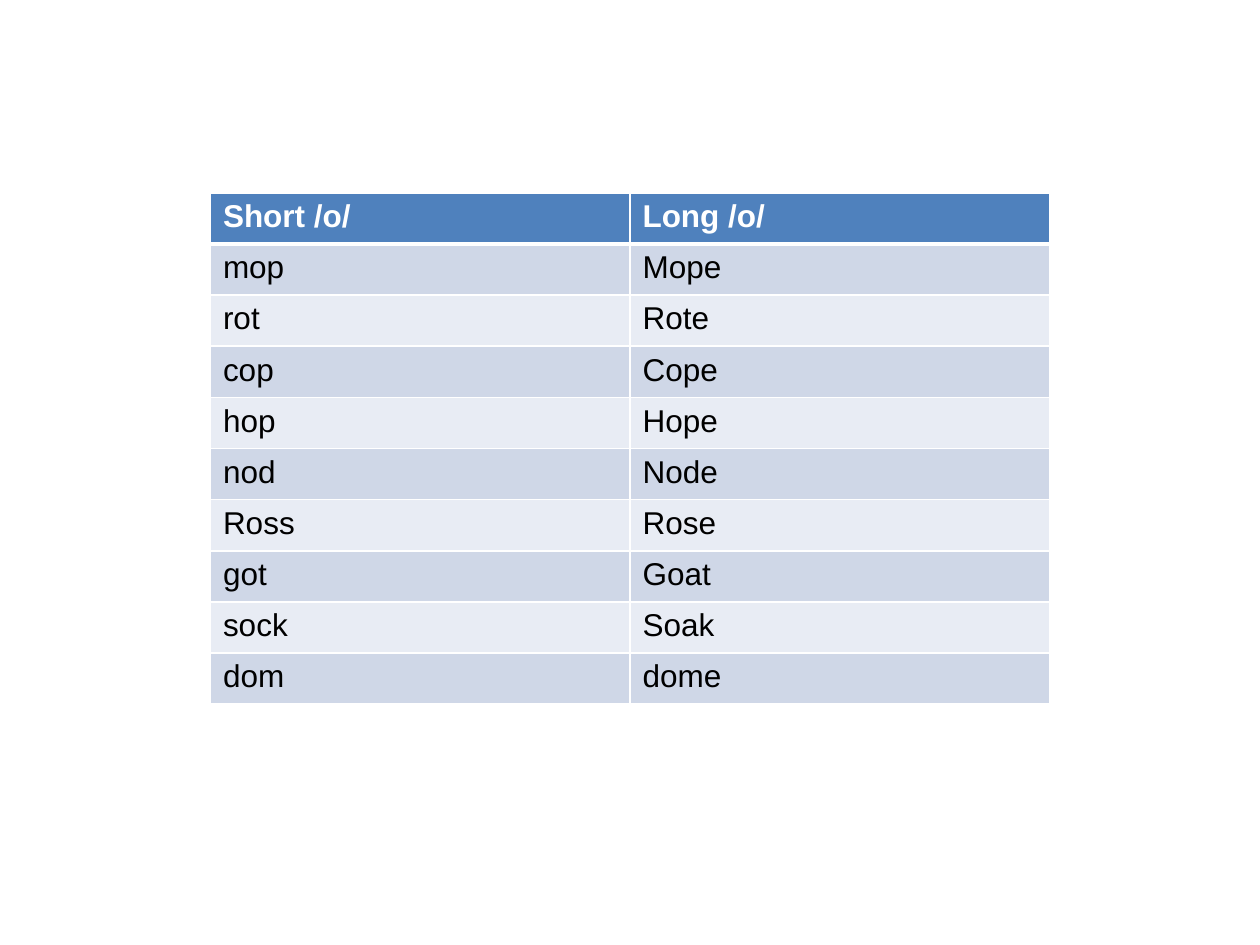
from typing import NamedTuple

from lxml.etree import SubElement
from pptx import Presentation
from pptx.dml.color import RGBColor
from pptx.oxml.ns import qn
from pptx.table import _Cell
from pptx.util import Inches, Pt


class WordPair(NamedTuple):
    short: str
    long: str


class RowStyle(NamedTuple):
    fill: str
    text: str
    bold: bool
    top: float
    bottom: float


HEADINGS = WordPair("Short /o/", "Long /o/")
WORD_PAIRS = [
    WordPair("mop", "Mope"),
    WordPair("rot", "Rote"),
    WordPair("cop", "Cope"),
    WordPair("hop", "Hope"),
    WordPair("nod", "Node"),
    WordPair("Ross", "Rose"),
    WordPair("got", "Goat"),
    WordPair("sock", "Soak"),
    WordPair("dom", "dome"),
]
THIN, THICK = 1, 3
BORDER = "FFFFFF"


def color(hex_code: str) -> RGBColor:
    return RGBColor.from_string(hex_code)


def row_style(row: int) -> RowStyle:
    if row == 0:
        return RowStyle("4F81BD", "FFFFFF", True, THIN, THICK)
    band = "CFD7E7" if row % 2 else "E8ECF4"
    return RowStyle(band, "000000", False, THICK if row == 1 else THIN, THIN)


def add_borders(cell: _Cell, top: float, bottom: float) -> None:
    properties = cell._tc.get_or_add_tcPr()
    widths = {"a:lnL": THIN, "a:lnR": THIN, "a:lnT": top, "a:lnB": bottom}
    for side, width in widths.items():
        line = SubElement(properties, qn(side), w=str(Pt(width)))
        SubElement(SubElement(line, qn("a:solidFill")), qn("a:srgbClr"), val=BORDER)


def fill_cell(cell: _Cell, word: str, style: RowStyle) -> None:
    add_borders(cell, style.top, style.bottom)
    cell.fill.solid()
    cell.fill.fore_color.rgb = color(style.fill)
    cell.text = word
    font = cell.text_frame.paragraphs[0].runs[0].font
    for attribute, value in {"name": "Arial", "size": Pt(18), "bold": style.bold}.items():
        setattr(font, attribute, value)
    font.color.rgb = color(style.text)


def main() -> None:
    presentation = Presentation()
    presentation.slide_width, presentation.slide_height = Inches(10), Inches(7.5)
    slide = presentation.slides.add_slide(presentation.slide_layouts[6])

    rows = [HEADINGS, *WORD_PAIRS]
    vowel_table = slide.shapes.add_table(
        len(rows), len(HEADINGS), Inches(1.67), Inches(1.53), Inches(6.66), Inches(4.06)
    ).table
    for row, pair in enumerate(rows):
        for column, word in enumerate(pair):
            fill_cell(vowel_table.cell(row, column), word, row_style(row))

    presentation.save("out.pptx")


if __name__ == "__main__":
    main()
